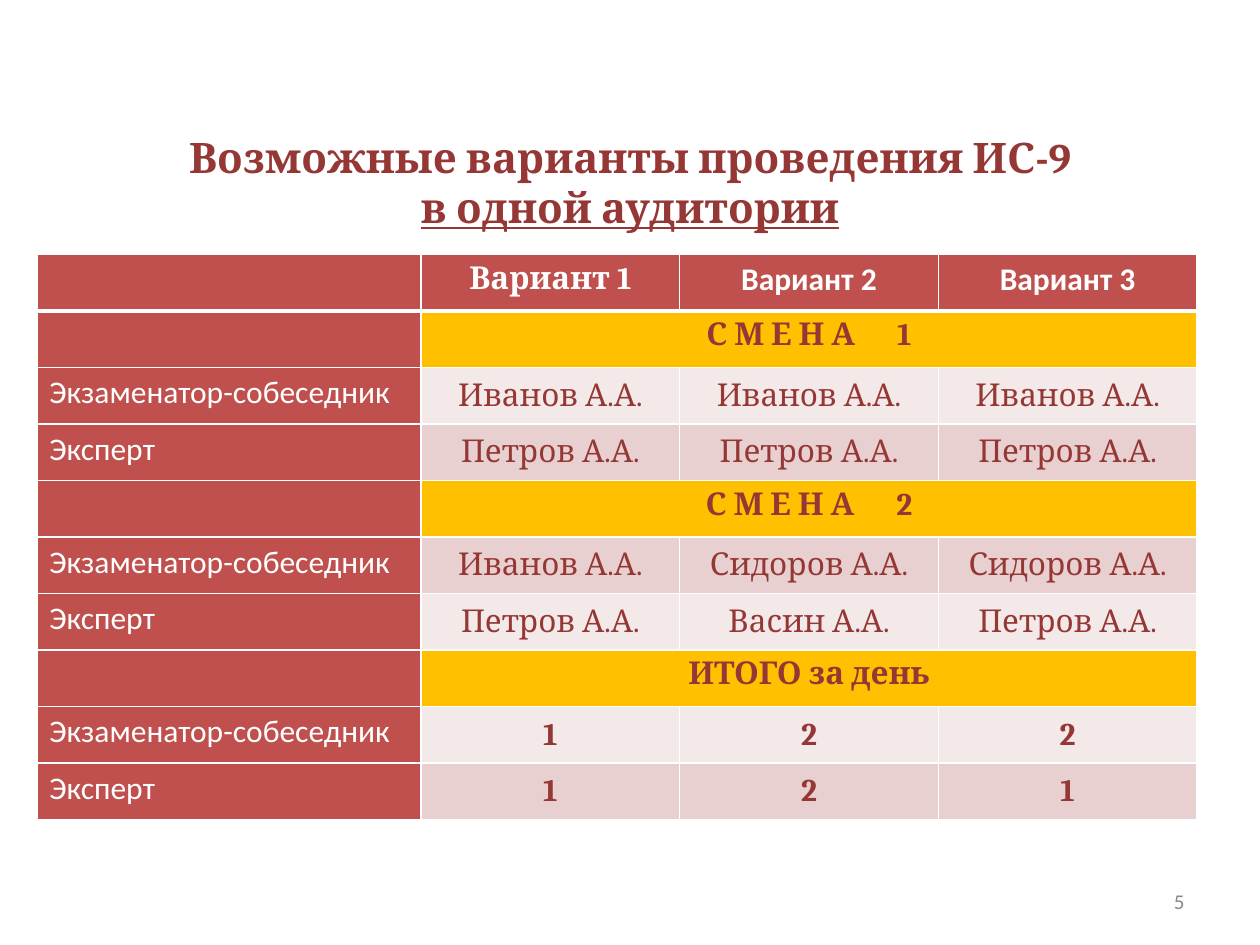
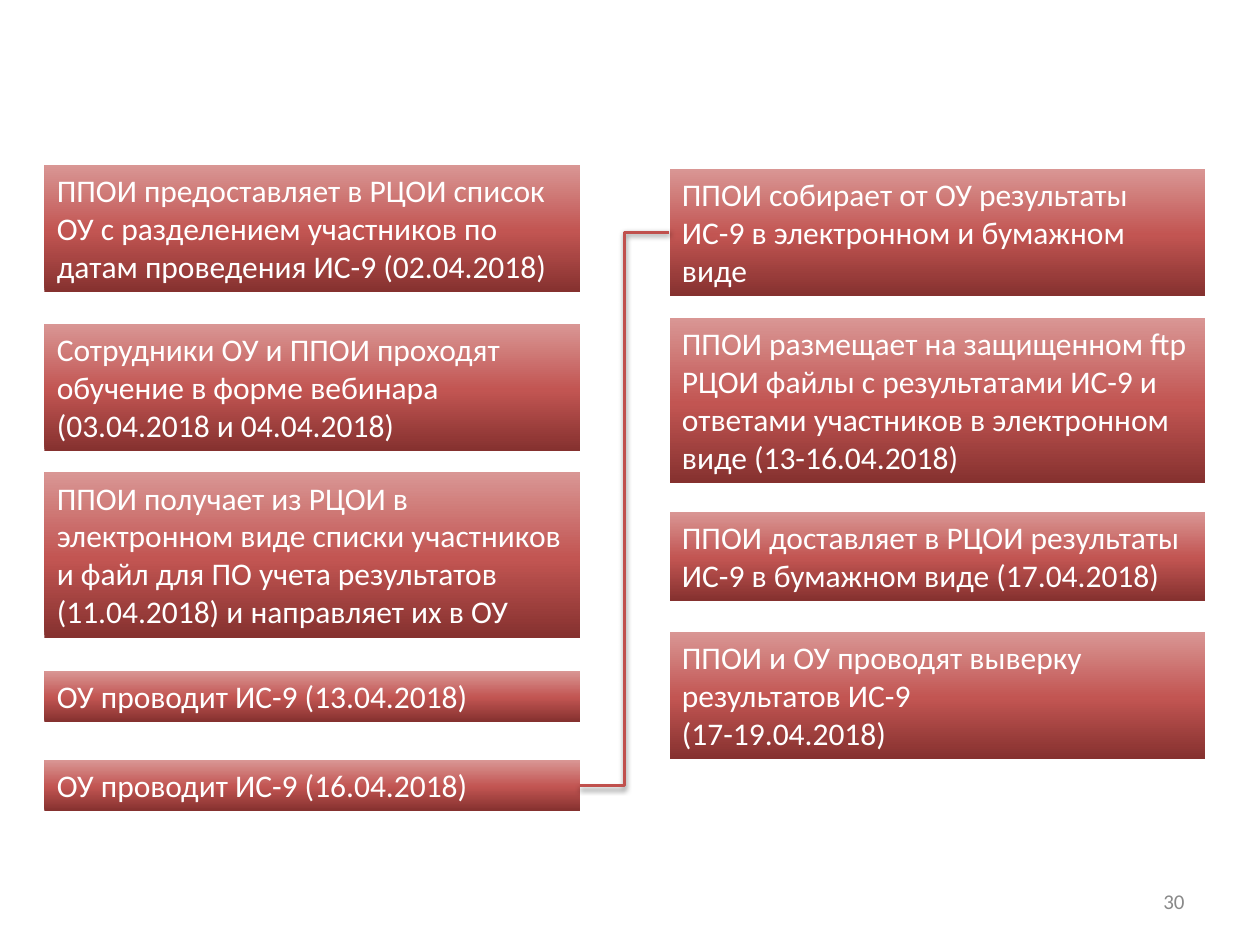
from copy import deepcopy
from dataclasses import dataclass

from lxml import etree
from pptx import Presentation
from pptx.dml.color import RGBColor
from pptx.enum.shapes import MSO_CONNECTOR, MSO_SHAPE
from pptx.enum.text import MSO_ANCHOR as Anchor, MSO_AUTO_SIZE as AutoSize, PP_ALIGN as Align
from pptx.oxml import parse_xml
from pptx.oxml.ns import nsdecls, qn
from pptx.util import Pt


@dataclass(frozen=True)
class Theme:
    heading_font: str = "Cambria"
    text_font: str = "Calibri"
    title_size: int = 24
    text_size: int = 18
    number_size: int = 12
    dark_red: str = "953735"
    red: str = "C0504D"
    gold: str = "FFC000"
    light_band: str = "F4E9E9"
    dark_band: str = "E8D0D0"
    white: str = "FFFFFF"
    grey: str = "898989"
    gradient: tuple = ((0, "85312F"), (0.48, "C25552"), (1, "D99694"))


theme = Theme()


def style(paragraph, font, size, color, bold=False, align=Align.LEFT):
    paragraph.alignment = align
    paragraph.font.name = font
    paragraph.font.size = Pt(size)
    paragraph.font.bold = bold
    paragraph.font.color.rgb = RGBColor.from_string(color)


def fill_cell(cell, color, bottom_width=1):
    props = cell._tc.get_or_add_tcPr()
    widths = {"lnL": 1, "lnR": 1, "lnT": 1, "lnB": bottom_width}
    for place, (side, width) in enumerate(widths.items()):
        props.insert(place, parse_xml(
            f'<a:{side} {nsdecls("a")} w="{Pt(width)}"><a:solidFill>'
            f'<a:srgbClr val="{theme.white}"/></a:solidFill></a:{side}>'))
    cell.fill.solid()
    cell.fill.fore_color.rgb = RGBColor.from_string(color)


prs = Presentation()
prs.slide_width, prs.slide_height = Pt(720), Pt(540)
variants_slide = prs.slides.add_slide(prs.slide_layouts[5])
schedule_slide = prs.slides.add_slide(prs.slide_layouts[6])

# Page numbers
for slide, number in ((variants_slide, "5"), (schedule_slide, "30")):
    page = slide.shapes.add_textbox(Pt(516), Pt(500.5), Pt(168), Pt(28.75)).text_frame
    page.word_wrap = True
    page.vertical_anchor = Anchor.MIDDLE
    page.text = number
    style(page.paragraphs[0], theme.text_font, theme.number_size, theme.grey, align=Align.RIGHT)

# Slide 1: heading
heading = variants_slide.shapes.title
heading.left, heading.top, heading.width, heading.height = Pt(0), Pt(71.5), Pt(720), Pt(39.5)
heading.text_frame.auto_size = AutoSize.NONE
heading.text_frame.vertical_anchor = Anchor.TOP
heading_line = heading.text_frame.paragraphs[0]
heading_line.add_run().text = "Возможные варианты проведения ИС-9"
heading_line.add_line_break()
room = heading_line.add_run()
room.text = "в одной аудитории"
room.font.underline = True
style(heading_line, theme.heading_font, theme.title_size, theme.dark_red, True, Align.CENTER)

# Slide 1: table of variants; a one-item row is a section band
EXAMINER, EXPERT = "Экзаменатор-собеседник", "Эксперт"
IVANOV, PETROV, SIDOROV, VASIN = "Иванов А.А.", "Петров А.А.", "Сидоров А.А.", "Васин А.А."
variant_rows = [
    ("", "Вариант 1", "Вариант 2", "Вариант 3"),
    ("С М Е Н А 1",),
    (EXAMINER, IVANOV, IVANOV, IVANOV),
    (EXPERT, PETROV, PETROV, PETROV),
    ("С М Е Н А 2",),
    (EXAMINER, IVANOV, SIDOROV, SIDOROV),
    (EXPERT, PETROV, VASIN, PETROV),
    ("ИТОГО за день",),
    (EXAMINER, "1", "2", "2"),
    (EXPERT, "1", "2", "1"),
]
ROW_HEIGHT = 32.3
column_widths = (219.6, 147.8, 147.8, 147.8)
variants = variants_slide.shapes.add_table(
    len(variant_rows), len(column_widths), Pt(21), Pt(145.5),
    Pt(sum(column_widths)), Pt(ROW_HEIGHT * len(variant_rows))).table
variants.first_row = variants.horz_banding = False
for column, width in zip(variants.columns, column_widths):
    column.width = Pt(width)

for row, entries in enumerate(variant_rows):
    variants.rows[row].height = Pt(ROW_HEIGHT)
    is_header, is_section = row == 0, len(entries) == 1
    band = theme.light_band if row % 2 == 0 else theme.dark_band
    if is_section:
        variants.cell(row, 1).merge(variants.cell(row, 3))
        entries = ("", entries[0], "", "")
    for col, entry in enumerate(entries):
        cell = variants.cell(row, col)
        if is_header or col == 0:
            fill_cell(cell, theme.red, 3 if is_header else 1)
        else:
            fill_cell(cell, theme.gold if is_section else band)
        if not is_header and not is_section and col > 0:
            cell.vertical_anchor = Anchor.MIDDLE
        line = cell.text_frame.paragraphs[0]
        if entry.startswith("С М"):
            # Widen the gap before the shift number by letter spacing
            word, shift = entry.rsplit(" ", 1)
            for part in (word, " ", shift):
                line.add_run().text = part
            line.runs[1].font._element.set("spc", "2000")
        else:
            line.text = entry
        if col == 0:
            style(line, theme.text_font, theme.text_size, theme.white)
        else:
            font = theme.text_font if is_header and col > 1 else theme.heading_font
            color = theme.white if is_header else theme.dark_red
            bold = is_header or is_section or entry.isdigit()
            style(line, font, theme.text_size, color, bold, Align.CENTER)

# Slide 2: steps as (top, number of lines, text), by column
schedule = {
    25.4: [
        (94.3, 3, "ППОИ предоставляет в РЦОИ список ОУ с разделением участников по датам проведения ИС-9 (02.04.2018)"),
        (185, 3, "Сотрудники ОУ и ППОИ проходят обучение в форме вебинара\v(03.04.2018 и 04.04.2018)"),
        (270, 4, "ППОИ получает из РЦОИ в электронном виде списки участников и файл для ПО учета результатов (11.04.2018) и направляет их в ОУ"),
        (383.4, 1, "ОУ проводит ИС-9 (13.04.2018)"),
        (434.4, 1, "ОУ проводит ИС-9 (16.04.2018)"),
    ],
    382.6: [
        (96.5, 3, "ППОИ собирает от ОУ результаты ИС-9 в электронном и бумажном виде"),
        (181.7, 4, "ППОИ размещает на защищенном ftp РЦОИ файлы с результатами ИС-9 и ответами участников в электронном виде (13-16.04.2018)"),
        (292.5, 2, "ППОИ доставляет в РЦОИ результаты ИС-9 в бумажном виде (17.04.2018)"),
        (361, 3, "ППОИ и ОУ проводят выверку результатов ИС-9\n(17-19.04.2018)"),
    ],
}
columns = []
for left, steps in schedule.items():
    columns.append([])
    for top, line_count, text in steps:
        step = schedule_slide.shapes.add_shape(
            MSO_SHAPE.RECTANGLE, Pt(left), Pt(top), Pt(306), Pt(7.2 + 21.8 * line_count))
        step.shadow.inherit = False
        step.line.fill.background()
        step.fill.gradient()
        step.fill.gradient_angle = 90
        stop_list = step._element.spPr.find(".//" + qn("a:gsLst"))
        stop_list.append(deepcopy(stop_list[0]))
        for stop, (position, color) in zip(step.fill.gradient_stops, theme.gradient):
            stop.position = position
            stop.color.rgb = RGBColor.from_string(color)
        frame = step.text_frame
        frame.word_wrap = True
        frame.auto_size = AutoSize.NONE
        frame.vertical_anchor = Anchor.TOP
        frame.text = text
        for paragraph in frame.paragraphs:
            style(paragraph, theme.text_font, theme.text_size, theme.white)
        columns[-1].append(step)

# Slide 2: link from the last step on the left to the first on the right
link = schedule_slide.shapes.add_connector(MSO_CONNECTOR.ELBOW, Pt(331.4), Pt(449), Pt(382.6), Pt(132.8))
link.begin_connect(columns[0][-1], 3)
link.end_connect(columns[1][0], 1)
link.line.width = Pt(2)
link.line.color.rgb = RGBColor.from_string(theme.red)
effects = etree.SubElement(link._element.spPr, qn("a:effectLst"))
shadow = etree.SubElement(effects, qn("a:outerShdw"), blurRad=str(Pt(3.1)), dist=str(Pt(1.6)),
                          dir="5400000", rotWithShape="0")
shadow_color = etree.SubElement(shadow, qn("a:srgbClr"), val="000000")
etree.SubElement(shadow_color, qn("a:alpha"), val="38000")

prs.save("out.pptx")
